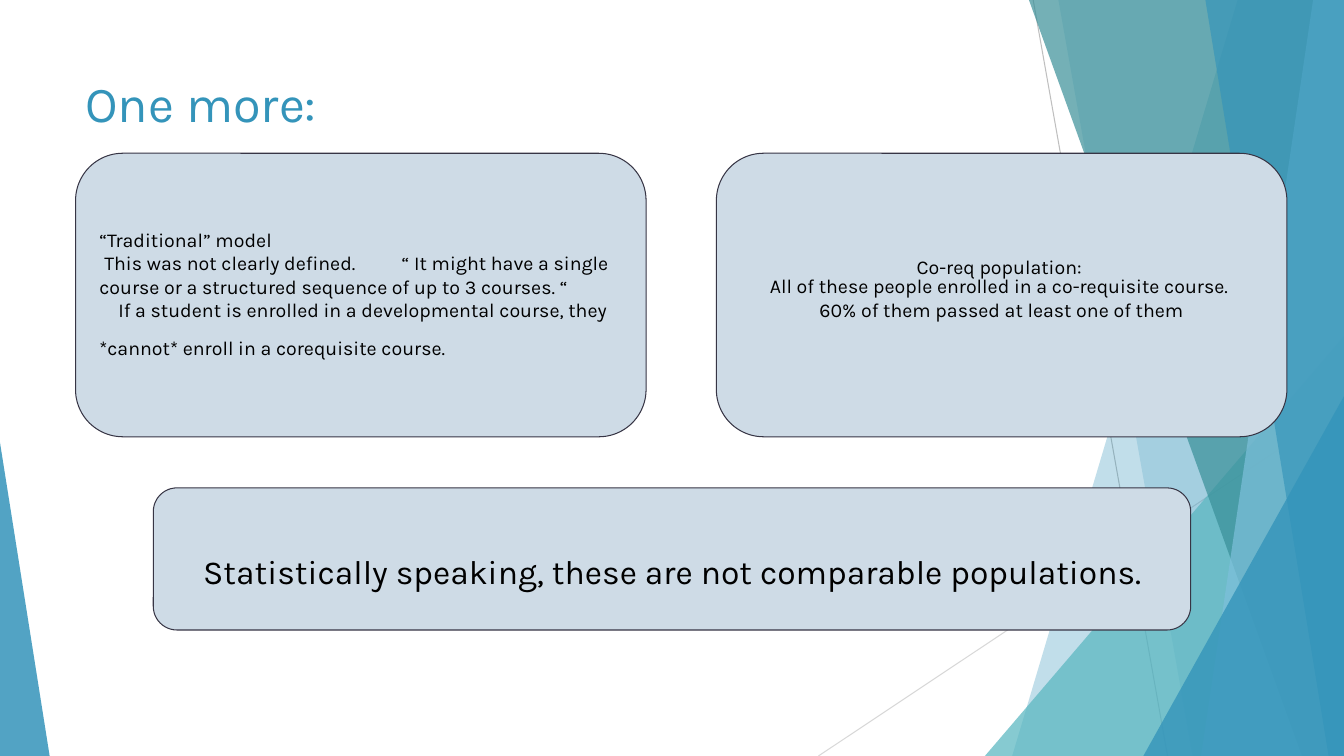
from lxml import etree
from pptx import Presentation
from pptx.dml.color import RGBColor
from pptx.enum import shapes, text
from pptx.oxml import ns
from pptx.util import Pt

BLUE = RGBColor(0x34, 0x94, 0xBA)
TEAL = RGBColor(0x58, 0xB6, 0xC0)
DEEP_TEAL = RGBColor(0x39, 0x8F, 0x98)
SKY = RGBColor(0x7E, 0xC0, 0xDB)
PANEL = RGBColor(0xCE, 0xDB, 0xE6)
OUTLINE = RGBColor(0x37, 0x35, 0x45)
BLACK = RGBColor(0, 0, 0)
GREY = RGBColor(0xBF, 0xBF, 0xBF)
LIGHT_GREY = RGBColor(0xD8, 0xD8, 0xD8)
WIDTH, HEIGHT = 960, 540
FONT = "Karla"
LEFT = text.PP_ALIGN.LEFT
CENTER = text.PP_ALIGN.CENTER


def apply(target, values):
    for name, value in values.items():
        setattr(target, name, value)


def fill_facet(shape, color, opacity):
    shape.shadow.inherit = False
    shape.fill.solid()
    shape.fill.fore_color.rgb = color
    shape.line.fill.background()
    color_element = shape.fill._xPr.find(".//" + ns.qn("a:srgbClr"))
    etree.SubElement(color_element, ns.qn("a:alpha"), val=str(opacity * 1000))


def add_ray(slide, start, end, color):
    ray = slide.shapes.add_connector(
        shapes.MSO_CONNECTOR.STRAIGHT, *map(Pt, start + end))
    ray.line.color.rgb = color
    ray.line.width = Pt(0.75)
    etree.SubElement(ray._element.spPr, ns.qn("a:effectLst"))


def add_band(slide, top_left, bottom_left, color, opacity):
    builder = slide.shapes.build_freeform(top_left, -0.5, scale=Pt(1))
    builder.add_line_segments(
        [(WIDTH, -0.5), (WIDTH, HEIGHT), (bottom_left, HEIGHT)], close=True)
    fill_facet(builder.convert_to_shape(), color, opacity)


def add_wedge(slide, left, top, width, apex, color, opacity):
    wedge = slide.shapes.add_shape(
        shapes.MSO_SHAPE.ISOSCELES_TRIANGLE,
        *map(Pt, (left, top, width, HEIGHT - top)))
    wedge.adjustments[0] = apex
    fill_facet(wedge, color, opacity)


def add_background(slide):
    add_ray(slide, (738, 0), (834, HEIGHT), GREY)
    add_ray(slide, (WIDTH, 290), (584.6, HEIGHT), LIGHT_GREY)
    add_band(slide, 884, 723, BLUE, 30)
    add_band(slide, 756, 852, BLUE, 20)
    add_wedge(slide, 703.5, 240, 256.5, 1, TEAL, 72)
    add_band(slide, 735, 929.5, DEEP_TEAL, 70)
    add_band(slide, 938, 858.5, SKY, 70)
    add_band(slide, 861, 949, BLUE, 65)
    add_wedge(slide, 816.7, 283, 143.3, 1, BLUE, 80)
    add_wedge(slide, 0, 316, 35.5, 0, BLUE, 85)


def write_paragraphs(frame, lines, color):
    for index, (runs, alignment, indent, tab, spacing) in enumerate(lines):
        paragraph = frame.paragraphs[0] if index == 0 else frame.add_paragraph()
        properties = paragraph._p.get_or_add_pPr()
        properties.set("indent", str(Pt(indent)))
        properties.set("marL", "0")
        if tab:
            tabs = etree.SubElement(properties, ns.qn("a:tabLst"))
            etree.SubElement(tabs, ns.qn("a:tab"), pos=str(Pt(tab)), algn="l")
        apply(paragraph, {"alignment": alignment, **spacing})
        for words, size in runs:
            run = paragraph.add_run()
            run.text = words
            apply(run.font, {"name": FONT, "size": Pt(size)})
            run.font.color.rgb = color


def add_panel(slide, box, lines, top_inset=7.2):
    panel = slide.shapes.add_shape(
        shapes.MSO_SHAPE.ROUNDED_RECTANGLE, *map(Pt, box))
    panel.shadow.inherit = False
    panel.fill.solid()
    panel.fill.fore_color.rgb = PANEL
    panel.line.color.rgb = OUTLINE
    panel.line.width = Pt(0.75)
    apply(panel.text_frame, {
        "word_wrap": True, "vertical_anchor": text.MSO_ANCHOR.MIDDLE,
        "margin_left": Pt(7.2), "margin_right": Pt(7.2),
        "margin_top": Pt(top_inset), "margin_bottom": Pt(7.2)})
    write_paragraphs(panel.text_frame, lines, BLACK)


def add_title(slide, box):
    title = slide.shapes.add_textbox(*map(Pt, box))
    apply(title.text_frame, {
        "word_wrap": True, "vertical_anchor": text.MSO_ANCHOR.TOP,
        "margin_left": Pt(7.2), "margin_right": Pt(7.2),
        "margin_top": Pt(3.6), "margin_bottom": Pt(3.6)})
    write_paragraphs(title.text_frame, [([("One more:", 36)], LEFT, 0, 0, {})], BLUE)


def add_populations(slide, left, top, width, height, pitch):
    traditional = [
        ([("“Traditional” model", 14)], LEFT, 0, 0, {}),
        ([("This was not clearly defined.\t“ It might have a single course or a "
           "structured sequence of up to 3 courses. “", 14)], LEFT, 3.6, 193, {}),
        ([("If a student is enrolled in a developmental course, they *cannot* "
           "enroll in a corequisite course.", 14), (" ", 24)], LEFT, 13.6, 0, {}),
    ]
    tight = {"line_spacing": Pt(6.8)}
    corequisite = [
        ([("Co-req population: ", 14)], CENTER, 0, 0,
         {**tight, "space_after": Pt(6.8)}),
        ([("All of these people enrolled in a co-requisite course. ", 14)],
         CENTER, 0, 0, tight),
        ([("60% of them passed at least one of them", 14)], CENTER, 0, 0, {}),
    ]
    for column, lines in enumerate((traditional, corequisite)):
        add_panel(slide, (left + column * pitch, top, width, height), lines)


def add_conclusion(slide, box):
    words = "Statistically speaking, these are not comparable populations."
    add_panel(slide, box, [([(words, 24)], LEFT, 23.6, 0, {})], top_inset=24)


def main():
    presentation = Presentation()
    apply(presentation, {"slide_width": Pt(WIDTH), "slide_height": Pt(HEIGHT)})
    slide = presentation.slides.add_slide(presentation.slide_layouts[6])
    add_background(slide)
    add_populations(slide, 54, 109.5, 407.5, 202.5, 457.75)
    add_conclusion(slide, (109.5, 348.5, 741, 101.5))
    add_title(slide, (54, 48, 676, 63))
    presentation.save("out.pptx")


if __name__ == "__main__":
    main()
